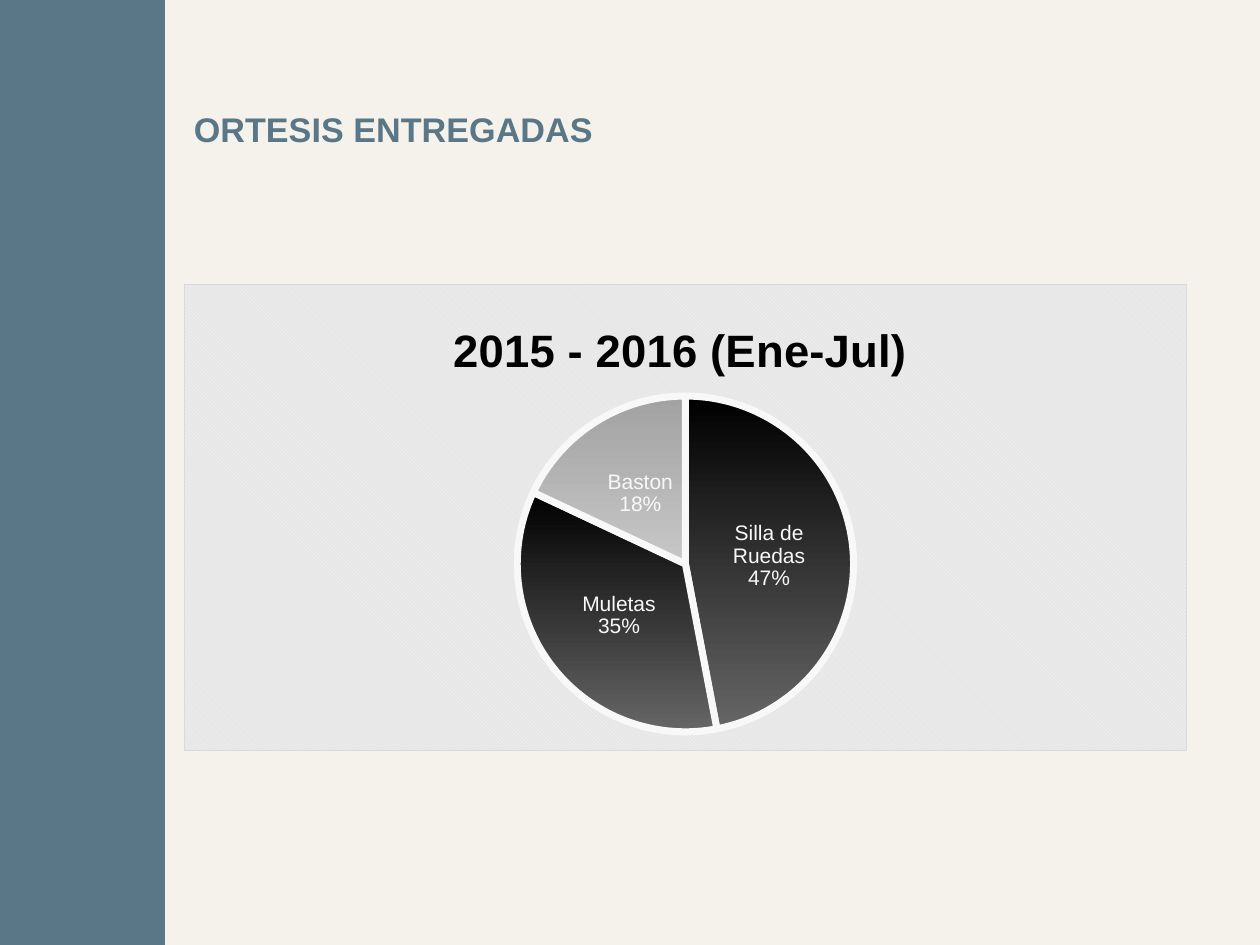
from lxml import etree
from pptx import Presentation
from pptx.chart.data import CategoryChartData
from pptx.dml.color import RGBColor
from pptx.enum.chart import XL_CHART_TYPE, XL_LABEL_POSITION
from pptx.enum.shapes import MSO_SHAPE
from pptx.enum.text import MSO_ANCHOR
from pptx.oxml import parse_xml
from pptx.oxml.ns import nsdecls, qn
from pptx.util import Inches, Pt

PIE = XL_CHART_TYPE.PIE
CENTER = XL_LABEL_POSITION.CENTER
RECTANGLE = MSO_SHAPE.RECTANGLE
MIDDLE = MSO_ANCHOR.MIDDLE

CREAM = RGBColor(0xF5, 0xF2, 0xEB)
SLATE = RGBColor(0x59, 0x77, 0x86)
BLACK = RGBColor(0x00, 0x00, 0x00)
GRAPHITE = RGBColor(0x66, 0x66, 0x66)
GRAY = RGBColor(0xA2, 0xA2, 0xA2)
SILVER = RGBColor(0xC7, 0xC7, 0xC7)
MIST = RGBColor(0xE6, 0xE6, 0xE6)
BORDER = RGBColor(0xD9, 0xD9, 0xD9)
WHITE = RGBColor(0xF8, 0xF8, 0xF8)

DARK_SLICE = (BLACK, GRAPHITE)
LIGHT_SLICE = (GRAY, SILVER)
DELIVERIES = {
    "Silla de Ruedas": (47, DARK_SLICE),
    "Muletas": (35, DARK_SLICE),
    "Baston": (18, LIGHT_SLICE),
}


class SlideBuilder:
    font_name = "Arial"

    def __init__(self, presentation):
        self.width = presentation.slide_width
        self.height = presentation.slide_height
        self.slide = presentation.slides.add_slide(presentation.slide_layouts[6])

    def place(self, left, top, width, height):
        return (int(left * self.width), int(top * self.height),
                int(width * self.width), int(height * self.height))

    def style(self, font, size, color, bold=False):
        font.name = self.font_name
        font.size = Pt(size)
        font.color.rgb = color
        font.bold = bold

    def background(self, color):
        fill = self.slide.background.fill
        fill.solid()
        fill.fore_color.rgb = color

    def band(self, area, color):
        shape = self.slide.shapes.add_shape(RECTANGLE, *self.place(*area))
        shape.shadow.inherit = False
        shape.fill.solid()
        shape.fill.fore_color.rgb = color
        shape.line.fill.background()

    def heading(self, area, text, size, color):
        text_frame = self.slide.shapes.add_textbox(*self.place(*area)).text_frame
        text_frame.word_wrap = True
        text_frame.vertical_anchor = MIDDLE
        text_frame.margin_top = text_frame.margin_bottom = 0
        text_frame.text = text
        self.style(text_frame.paragraphs[0].runs[0].font, size, color, True)

    def pie(self, area, title, slices):
        data = CategoryChartData()
        data.categories = list(slices)
        data.add_series(title, [value for value, colors in slices.values()])
        frame = self.slide.shapes.add_chart(PIE, *self.place(*area), data)
        chart = frame.chart
        chart.has_legend = False
        self.style(chart.font, 10, BLACK)
        self.pattern_area(chart)

        chart.has_title = True
        title_frame = chart.chart_title.text_frame
        title_frame.text = title
        self.style(title_frame.paragraphs[0].runs[0].font, 26, BLACK, True)
        self.set_layout(chart.chart_title._element, 1, x=0.26, y=0.06)

        plot = chart.plots[0]
        plot.vary_by_categories = True
        self.set_layout(plot._element.getparent(), 0, x=0.33, y=0.24, w=0.34, h=0.72)
        for index, (value, colors) in enumerate(slices.values()):
            self.slice_format(plot.series[0].points[index].format, colors)
        self.slice_labels(plot)

    def slice_format(self, point_format, colors):
        fill = point_format.fill
        fill.gradient()
        fill.gradient_angle = 270
        for stop, position, color in zip(fill.gradient_stops, (0, 1), colors):
            stop.position = position
            stop.color.rgb = color
        point_format.line.color.rgb = WHITE
        point_format.line.width = Pt(4)

    def slice_labels(self, plot):
        plot.has_data_labels = True
        labels = plot.data_labels
        labels.show_value = False
        labels.show_category_name = True
        labels.show_percentage = True
        labels.number_format = "0%"
        labels.number_format_is_linked = False
        labels.position = CENTER
        self.style(labels.font, 12, WHITE)
        separator = etree.Element(qn("c:separator"))
        separator.text = "\n"
        labels._element.find(qn("c:showBubbleSize")).addnext(separator)

    def set_layout(self, parent, index, **shares):
        for old_layout in parent.findall(qn("c:layout")):
            parent.remove(old_layout)
        layout = etree.Element(qn("c:layout"))
        manual = etree.SubElement(layout, qn("c:manualLayout"))
        if "w" in shares:
            etree.SubElement(manual, qn("c:layoutTarget")).set("val", "inner")
        for axis in "xy":
            etree.SubElement(manual, qn(f"c:{axis}Mode")).set("val", "edge")
        for name, share in shares.items():
            etree.SubElement(manual, qn(f"c:{name}")).set("val", str(share))
        parent.insert(index, layout)

    def pattern_area(self, chart):
        properties = parse_xml(
            f'<c:spPr {nsdecls("c", "a")}><a:pattFill prst="dkDnDiag">'
            f'<a:fgClr><a:srgbClr val="{WHITE}"/></a:fgClr>'
            f'<a:bgClr><a:srgbClr val="{MIST}"/></a:bgClr></a:pattFill>'
            f'<a:ln w="{Pt(0.75)}"><a:solidFill><a:srgbClr val="{BORDER}"/>'
            '</a:solidFill></a:ln></c:spPr>')
        chart._chartSpace.find(qn("c:chart")).addnext(properties)


def main():
    presentation = Presentation()
    presentation.slide_width = Inches(10)
    presentation.slide_height = Inches(7.5)
    builder = SlideBuilder(presentation)
    builder.background(CREAM)
    builder.band((0, 0, 0.131, 1), SLATE)
    builder.heading((0.144, 0.112, 0.797, 0.048), "ORTESIS ENTREGADAS", 19.5, SLATE)
    builder.pie((0.146, 0.3, 0.796, 0.495), "2015 - 2016 (Ene-Jul) ", DELIVERIES)
    presentation.save("out.pptx")


if __name__ == "__main__":
    main()
